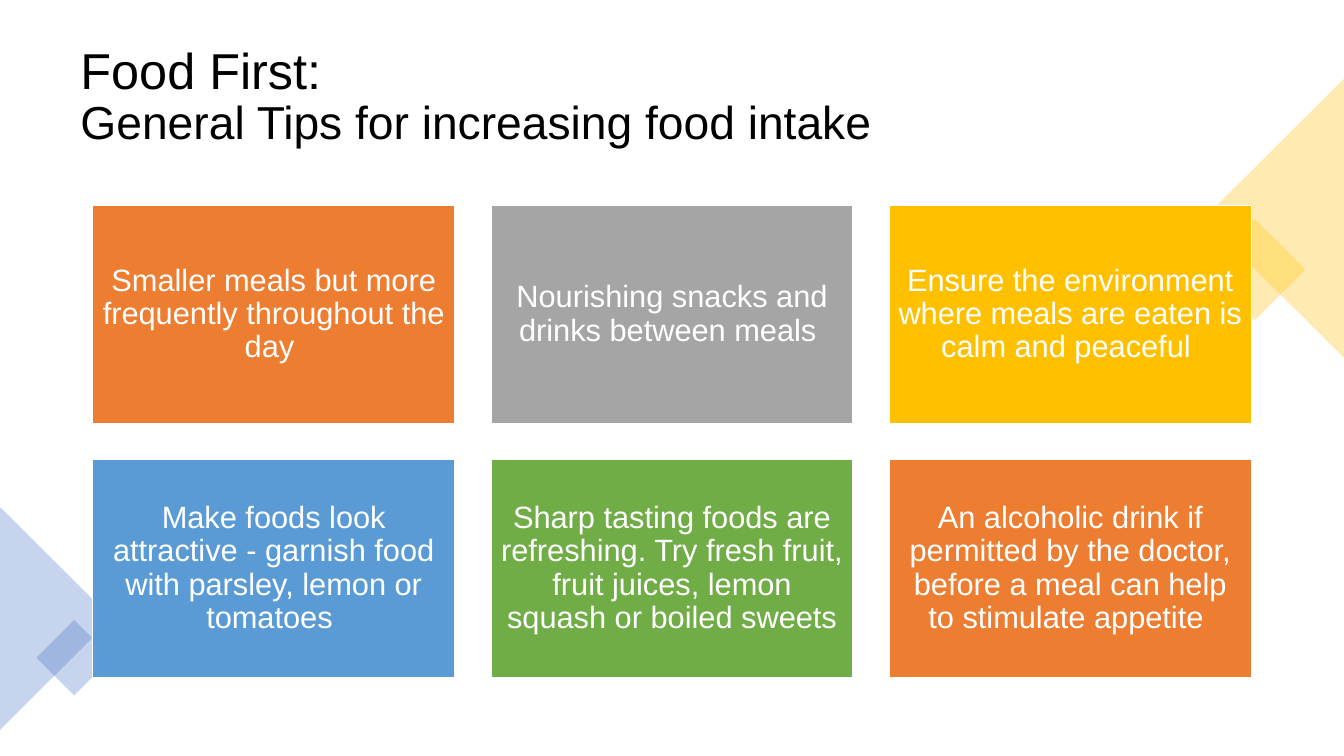
from pptx import Presentation
from pptx.dml.color import RGBColor
from pptx.enum.shapes import MSO_SHAPE
from pptx.enum.text import MSO_ANCHOR, PP_ALIGN
from pptx.oxml.ns import qn
from pptx.util import Inches, Pt
from lxml import etree

RECTANGLE = MSO_SHAPE.RECTANGLE
TRIANGLE = MSO_SHAPE.ISOSCELES_TRIANGLE
MIDDLE = MSO_ANCHOR.MIDDLE
CENTER = PP_ALIGN.CENTER

BLACK = RGBColor(0x00, 0x00, 0x00)
WHITE = RGBColor(0xFF, 0xFF, 0xFF)
ORANGE = RGBColor(0xED, 0x7D, 0x31)
GRAY = RGBColor(0xA5, 0xA5, 0xA5)
GOLD = RGBColor(0xFF, 0xC0, 0x00)
SKY = RGBColor(0x5B, 0x9B, 0xD5)
GREEN = RGBColor(0x70, 0xAD, 0x47)
BLUE = RGBColor(0x44, 0x72, 0xC4)
FONT = "Arial"


def add_filled_shape(kind, left, top, width, height, color):
    shape = page.shapes.add_shape(
        kind, Inches(left), Inches(top), Inches(width), Inches(height))
    shape.shadow.inherit = False
    shape.fill.solid()
    shape.fill.fore_color.rgb = color
    return shape


def add_span(para, text, size, color):
    span = para.add_run()
    span.text = text
    span.font.name = FONT
    span.font.size = Pt(size)
    span.font.color.rgb = color


deck = Presentation()
deck.slide_width = Inches(13.33)
deck.slide_height = Inches(7.5)
page = deck.slides.add_slide(deck.slide_layouts[6])

# Title
title = page.shapes.add_textbox(
    Inches(0.7), Inches(0.35), Inches(11.93), Inches(1.24))
title.text_frame.word_wrap = True
title.text_frame.vertical_anchor = MIDDLE
para = title.text_frame.paragraphs[0]
para.line_spacing = 0.9
add_span(para, "Food First:", 36, BLACK)
para.add_line_break()
add_span(para, "General Tips for increasing food intake", 33, BLACK)

# Translucent corner decorations
decorations = [
    (RECTANGLE, 12.09, 2.32, 0.71, 0.71, 45, GOLD),
    (TRIANGLE, 11.25, 1.47, 2.77, 1.39, 270, GOLD),
    (TRIANGLE, -0.55, 5.58, 2.21, 1.11, 90, BLUE),
    (RECTANGLE, 0.47, 6.26, 0.53, 0.53, 45, BLUE),
]
for kind, left, top, width, height, angle, color in decorations:
    corner = add_filled_shape(kind, left, top, width, height, color)
    corner.rotation = angle
    corner.line.fill.background()
    fill_color = corner.fill._xPr.find(qn("a:solidFill"))[0]
    etree.SubElement(fill_color, qn("a:alpha"), val="30000")

# Grid of tip cards
COLUMNS = 3
CARD_WIDTH, CARD_HEIGHT, GAP = 3.59, 2.16, 0.36
GRID_LEFT, GRID_TOP = 0.92, 2.04
tips = [
    ("Smaller meals but more frequently throughout the day ", ORANGE),
    ("Nourishing snacks and drinks between meals ", GRAY),
    ("Ensure the environment where meals are eaten is calm and peaceful ", GOLD),
    ("Make foods look attractive - garnish food with parsley, lemon or tomatoes ", SKY),
    ("Sharp tasting foods are refreshing. Try fresh fruit, fruit juices, "
     "lemon squash or boiled sweets", GREEN),
    ("An alcoholic drink if permitted by the doctor, before a meal can help "
     "to stimulate appetite ", ORANGE),
]
for index, (tip, color) in enumerate(tips):
    row, column = divmod(index, COLUMNS)
    card = add_filled_shape(
        RECTANGLE,
        GRID_LEFT + column * (CARD_WIDTH + GAP),
        GRID_TOP + row * (CARD_HEIGHT + GAP),
        CARD_WIDTH, CARD_HEIGHT, color)
    card.line.color.rgb = WHITE
    card.line.width = Pt(1)
    frame = card.text_frame
    frame.word_wrap = True
    frame.vertical_anchor = MIDDLE
    frame.margin_left = frame.margin_right = Inches(0.09)
    frame.margin_top = frame.margin_bottom = Inches(0.09)
    para = frame.paragraphs[0]
    para.alignment = CENTER
    para.line_spacing = 0.9
    add_span(para, tip, 22, WHITE)

deck.save("out.pptx")
